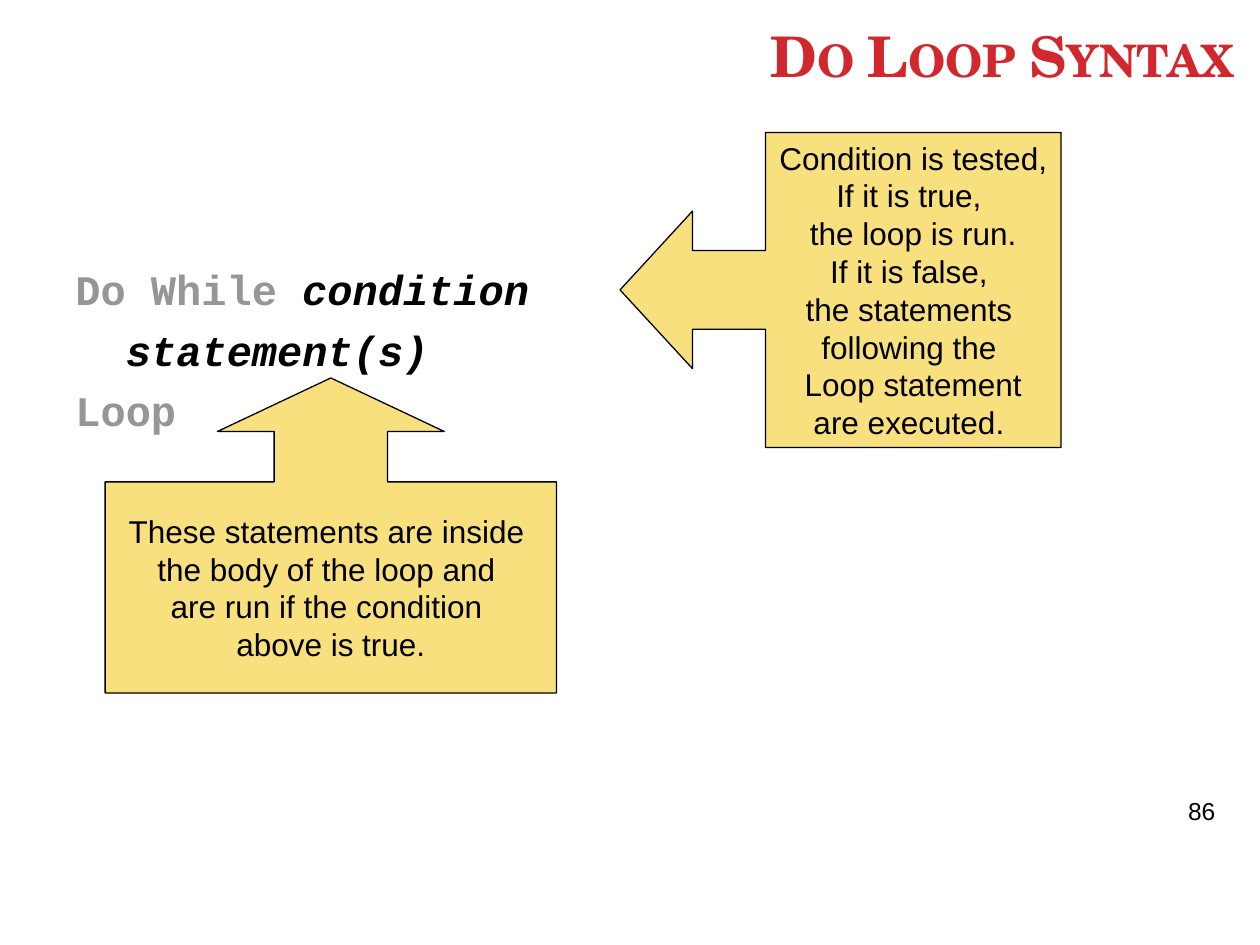
from lxml import etree
from pptx import Presentation
from pptx.dml.color import RGBColor
from pptx.enum.shapes import MSO_SHAPE
from pptx.enum.text import MSO_ANCHOR, PP_ALIGN
from pptx.oxml.ns import qn
from pptx.util import Cm, Pt

LEFT_CALLOUT = MSO_SHAPE.LEFT_ARROW_CALLOUT
UP_CALLOUT = MSO_SHAPE.UP_ARROW_CALLOUT
MIDDLE, BOTTOM = MSO_ANCHOR.MIDDLE, MSO_ANCHOR.BOTTOM
CENTER, RIGHT = PP_ALIGN.CENTER, PP_ALIGN.RIGHT
BLACK, GRAY, RED, GOLD = "000000", "969696", "D1282E", "F5C201"


def color(hex_value):
    return RGBColor.from_string(hex_value)


def style(span, font, size, hex_value, bold=False, italic=False):
    span.font.name = font
    span.font.size = Pt(size)
    span.font.color.rgb = color(hex_value)
    span.font.bold = bold
    span.font.italic = italic


deck = Presentation()
deck.slide_width, deck.slide_height = Cm(25.4), Cm(19.05)
page = deck.slides.add_slide(deck.slide_layouts[6])

# Title in small capitals
box = page.shapes.add_textbox(Cm(0.43), Cm(0.36), Cm(24.69), Cm(1.55))
box.text_frame.word_wrap = True
box.text_frame.vertical_anchor = BOTTOM
box.text_frame.text = "Do Loop Syntax"
para = box.text_frame.paragraphs[0]
para.alignment = RIGHT
style(para.runs[0], "TeX Gyre Schola", 32, RED, bold=True)
para.runs[0].font._element.set("cap", "small")

# Loop syntax: keywords in gray, parts to fill in in black italics
code_lines = [
    (0, [("Do While ", GRAY, False), ("condition", BLACK, True)]),
    (1.02, [("statement(s)", BLACK, True)]),
    (0, [("Loop", GRAY, False)]),
]
box = page.shapes.add_textbox(Cm(1.27), Cm(5.18), Cm(11), Cm(4))
frame = box.text_frame
frame.word_wrap = True
for number, (indent, parts) in enumerate(code_lines):
    para = frame.add_paragraph() if number else frame.paragraphs[0]
    para.space_after = Pt(6)
    para._p.get_or_add_pPr().set("marL", str(Cm(indent)))
    for text, hex_value, italic in parts:
        span = para.add_run()
        span.text = text
        style(span, "Courier New", 24, hex_value, bold=True, italic=italic)

# Page number
box = page.shapes.add_textbox(Cm(23.7), Cm(15.93), Cm(1.7), Cm(1.45))
box.text_frame.word_wrap = True
box.text_frame.text = "86"
style(box.text_frame.paragraphs[0].runs[0], "Arial", 14, BLACK)

# Callouts explaining the condition and the loop body
callouts = [
    (LEFT_CALLOUT, (12.5, 2.67, 8.89, 6.35), (0.25, 0.25, 0.23, 0.67), [
        "Condition is tested,", "If it is true, ", "the loop is run.",
        "If it is false, ", "the statements ", "following the ",
        "Loop statement", "are executed. "]),
    (UP_CALLOUT, (2.12, 7.62, 9.1, 6.35), (0.36, 0.36, 0.17, 0.67), [
        "These statements are inside ", "the body of the loop and ",
        "are run if the condition ", "above is true."]),
]
for kind, place, adjustments, lines in callouts:
    callout = page.shapes.add_shape(kind, *(Cm(length) for length in place))
    callout.shadow.inherit = False
    for number, value in enumerate(adjustments):
        callout.adjustments[number] = value
    callout.fill.solid()
    callout.fill.fore_color.rgb = color(GOLD)
    fill_color = callout._element.spPr.find(qn("a:solidFill")).find(qn("a:srgbClr"))
    etree.SubElement(fill_color, qn("a:alpha"), val="50000")
    callout.line.color.rgb = color(BLACK)
    callout.line.width = Pt(0.75)
    frame = callout.text_frame
    frame.word_wrap = False
    frame.vertical_anchor = MIDDLE
    frame.text = "\n".join(lines)
    for para in frame.paragraphs:
        para.alignment = CENTER
        style(para.runs[0], "Arial", 18, BLACK)

deck.save("out.pptx")
